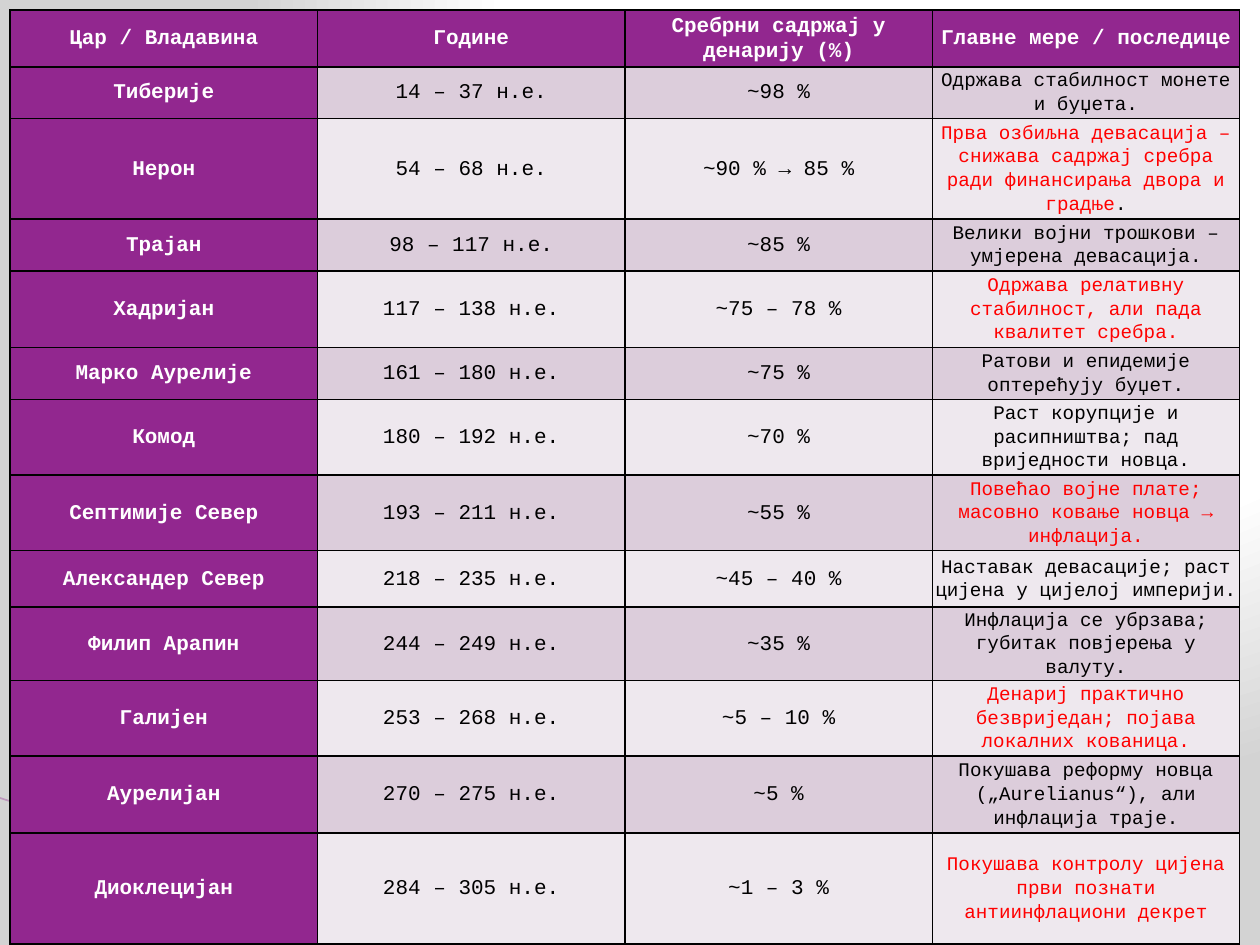
from lxml import etree
from pptx import Presentation
from pptx.dml.color import RGBColor
from pptx.enum.shapes import MSO_CONNECTOR
from pptx.enum.text import MSO_ANCHOR, PP_ALIGN
from pptx.oxml import parse_xml
from pptx.oxml.ns import nsdecls, qn
from pptx.util import Inches, Pt

FONT = "Courier New"
WHITE = RGBColor(0xFF, 0xFF, 0xFF)
BLACK = RGBColor(0x00, 0x00, 0x00)
RED = RGBColor(0xFF, 0x00, 0x00)
PURPLE = RGBColor(0x92, 0x27, 0x8F)
DARK_BAND = RGBColor(0xDC, 0xCD, 0xDB)
LIGHT_BAND = RGBColor(0xEE, 0xE8, 0xEE)
MAUVE = RGBColor(0xC4, 0xA1, 0xC2)
MAUVE_LINE = RGBColor(0xBD, 0x97, 0xBC)

HEADER = ["Цар / Владавина", "Године", "Сребрни садржај у денарију (%)", "Главне мере / последице"]

# Emperor, years, silver content, consequences, colour of the consequences
REIGNS = [
    ("Тиберије", "14 – 37 н.е.", "~98 %", "Одржава стабилност монете и буџета.", BLACK),
    ("Нерон", "54 – 68 н.е.", "~90 % → 85 %",
     "Прва озбиљна девасација – снижава садржај сребра ради финансирања двора и градње", RED),
    ("Трајан", "98 – 117 н.е.", "~85 %", "Велики војни трошкови – умјерена девасација.", BLACK),
    ("Хадријан", "117 – 138 н.е.", "~75 – 78 %",
     "Одржава релативну стабилност, али пада квалитет сребра.", RED),
    ("Марко Аурелије", "161 – 180 н.е.", "~75 %", "Ратови и епидемије оптерећују буџет.", BLACK),
    ("Комод", "180 – 192 н.е.", "~70 %",
     "Раст корупције и расипништва; пад вриједности новца.", BLACK),
    ("Септимије Север", "193 – 211 н.е.", "~55 %",
     "Повећао војне плате; масовно ковање новца → инфлација.", RED),
    ("Александер Север", "218 – 235 н.е.", "~45 – 40 %",
     "Наставак девасације; раст цијена у цијелој империји.", BLACK),
    ("Филип Арапин", "244 – 249 н.е.", "~35 %",
     "Инфлација се убрзава; губитак повјерења у валуту.", BLACK),
    ("Галијен", "253 – 268 н.е.", "~5 – 10 %",
     "Денариј практично безвриједан; појава локалних кованица.", RED),
    ("Аурелијан", "270 – 275 н.е.", "~5 %",
     "Покушава реформу новца („Aurelianus“), али инфлација траје.", BLACK),
    ("Диоклецијан", "284 – 305 н.е.", "~1 – 3 %",
     "Покушава контролу цијена први познати антиинфлациони декрет", RED),
]
BLACK_ENDINGS = {"Нерон": "."}  # full stop set apart from the red text

TABLE_LEFT, TABLE_TOP, COLUMN_WIDTH = 0.08, 0.08, 2.44
ROW_HEIGHTS = [0.45, 0.41, 0.8, 0.41, 0.61, 0.41, 0.6, 0.6, 0.45, 0.53, 0.6, 0.61, 0.88]

# Corner wedges: points, colour, opacity in percent
WEDGES = [
    ([(0.55, 6.51), (5.95, 7.51), (4.56, 7.51), (0.55, 6.5)], MAUVE, 40),
    ([(0.53, 6.49), (4.57, 7.51), (3.72, 7.52), (0.54, 6.5)], BLACK, 100),
]

BACKGROUND = f"""<p:bg {nsdecls('p', 'a')}><p:bgPr><a:gradFill rotWithShape="1"><a:gsLst>
<a:gs pos="0"><a:srgbClr val="FFFFFF"/></a:gs><a:gs pos="67000"><a:srgbClr val="FFFFFF"/></a:gs>
<a:gs pos="100000"><a:srgbClr val="D3D3D3"/></a:gs></a:gsLst>
<a:path path="circle"><a:fillToRect l="65000" t="0" r="0" b="98000"/></a:path>
</a:gradFill><a:effectLst/></p:bgPr></p:bg>"""


def add_wedge(shapes, points, color, opacity):
    corners = [(Inches(x), Inches(y)) for x, y in points]
    builder = shapes.build_freeform(*corners[0])
    builder.add_line_segments(corners[1:], close=True)
    shape = builder.convert_to_shape()
    shape.shadow.inherit = False
    shape.fill.solid()
    shape.fill.fore_color.rgb = color
    shape.line.fill.background()
    if opacity < 100:
        color_element = shape.fill._xPr.find(".//" + qn("a:srgbClr"))
        etree.SubElement(color_element, qn("a:alpha"), val=str(opacity * 1000))


def add_borders(cell):
    properties = cell._tc.get_or_add_tcPr()
    for position, side in enumerate(("lnL", "lnR", "lnT", "lnB")):
        properties.insert(position, parse_xml(
            f'<a:{side} {nsdecls("a")} w="{Pt(1)}"><a:solidFill>'
            f'<a:srgbClr val="{BLACK}"/></a:solidFill></a:{side}>'))


def fill_cell(cell, runs, size, bold, fill):
    """Write (text, colour) runs into a centred, bordered cell."""
    cell.margin_left = cell.margin_right = cell.margin_top = cell.margin_bottom = Inches(0.01)
    cell.vertical_anchor = MSO_ANCHOR.MIDDLE
    cell.fill.solid()
    cell.fill.fore_color.rgb = fill
    add_borders(cell)
    paragraph = cell.text_frame.paragraphs[0]
    paragraph.alignment = PP_ALIGN.CENTER
    paragraph.line_spacing = 1.07
    for text, color in runs:
        run = paragraph.add_run()
        run.text = text
        run.font.name = FONT
        run.font.size = Pt(size)
        run.font.bold = bold
        run.font.color.rgb = color


presentation = Presentation()
presentation.slide_width, presentation.slide_height = Inches(10), Inches(7.5)
slide = presentation.slides.add_slide(presentation.slide_layouts[6])

# Background and corner decoration
slide._element.cSld.insert(0, parse_xml(BACKGROUND))
for points, color, opacity in WEDGES:
    add_wedge(slide.shapes, points, color, opacity)
edge = slide.shapes.add_connector(
    MSO_CONNECTOR.STRAIGHT, Inches(-0.01), Inches(6.33), Inches(3.71), Inches(7.52))
edge.line.color.rgb = MAUVE_LINE
edge.line.width = Pt(0.95)
etree.SubElement(edge._element.spPr, qn("a:effectLst"))

# Table
table = slide.shapes.add_table(
    len(ROW_HEIGHTS), len(HEADER), Inches(TABLE_LEFT), Inches(TABLE_TOP),
    Inches(COLUMN_WIDTH * len(HEADER)), Inches(sum(ROW_HEIGHTS))).table
for column in table.columns:
    column.width = Inches(COLUMN_WIDTH)
for row, height in zip(table.rows, ROW_HEIGHTS):
    row.height = Inches(height)

for column, title in enumerate(HEADER):
    fill_cell(table.cell(0, column), [(title, WHITE)], 12, True, PURPLE)
for row, (emperor, years, silver, outcome, color) in enumerate(REIGNS, start=1):
    band = DARK_BAND if row % 2 else LIGHT_BAND
    outcome_runs = [(outcome, color)]
    if emperor in BLACK_ENDINGS:
        outcome_runs.append((BLACK_ENDINGS[emperor], BLACK))
    fill_cell(table.cell(row, 0), [(emperor, WHITE)], 12, True, PURPLE)
    fill_cell(table.cell(row, 1), [(years, BLACK)], 12, False, band)
    fill_cell(table.cell(row, 2), [(silver, BLACK)], 12, False, band)
    fill_cell(table.cell(row, 3), outcome_runs, 11, False, band)

presentation.save("out.pptx")
